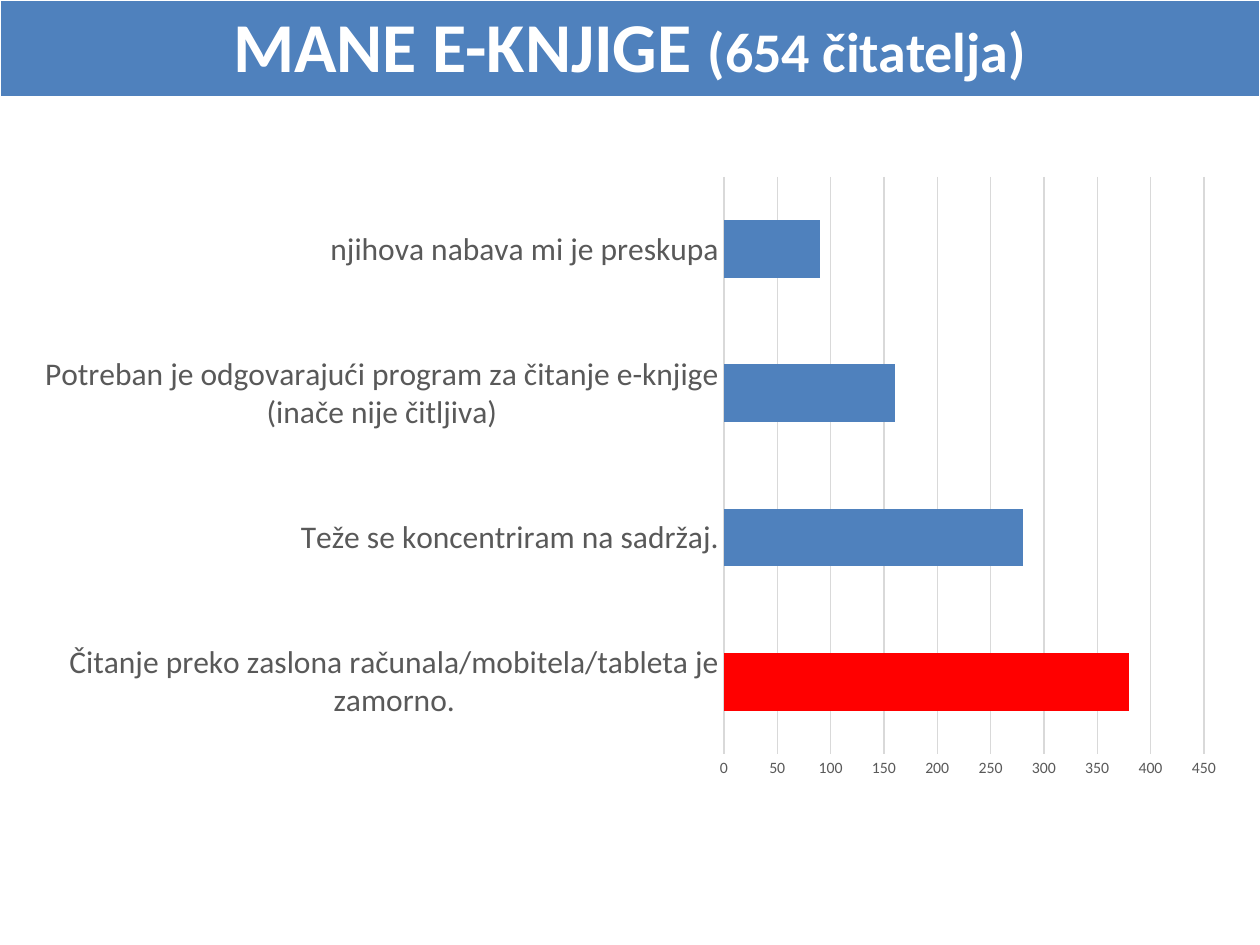
from lxml import etree
from pptx import Presentation
from pptx.chart.data import CategoryChartData
from pptx.dml.color import RGBColor
from pptx.enum.chart import XL_CHART_TYPE as ChartType, XL_TICK_MARK as TickMark
from pptx.enum.text import MSO_ANCHOR as Anchor, PP_ALIGN as Align
from pptx.oxml import parse_xml
from pptx.oxml.ns import nsdecls, qn
from pptx.util import Pt

SCALE = 914400 // 126
FONT = "Calibri"
BLUE, RED, WHITE, GRAY, GRID = "4F81BD", "FF0000", "FFFFFF", "595959", "D9D9D9"
TITLE = [("MANE E-KNJIGE ", 40), ("(654 čitatelja)", 32)]
BORDERS = {"lnL": 1, "lnR": 1, "lnT": 1, "lnB": 3}
BARS = [
    ("Čitanje preko zaslona računala/mobitela/tableta je zamorno.", 380, RED),
    ("Teže se koncentriram na sadržaj.", 280, BLUE),
    ("Potreban je odgovarajući program za čitanje e-knjige (inače nije čitljiva)", 160, BLUE),
    ("njihova nabava mi je preskupa", 90, BLUE),
]
SLIDE = (1260, 945)
TITLE_BOX = (0, 0, 1260, 97)
CHART_BOX = (20, 165, 1220, 625)
PLOT_BOX = (724, 177, 480, 577)


def px(*lengths):
    return [length * SCALE for length in lengths]


def color(value):
    return RGBColor.from_string(value)


def fill(target, value):
    target.fill.solid()
    target.fill.fore_color.rgb = color(value)


def style(font, size, value, bold=False):
    font.name, font.size, font.bold = FONT, Pt(size), bold
    font.color.rgb = color(value)


def add_text(paragraph, text, size, value=WHITE, bold=True):
    run = paragraph.add_run()
    run.text = text
    style(run.font, size, value, bold)


def add_title(slide):
    table = slide.shapes.add_table(1, 1, *px(*TITLE_BOX)).table
    cell = table.cell(0, 0)
    cell.vertical_anchor = Anchor.MIDDLE
    paragraph = cell.text_frame.paragraphs[0]
    paragraph.alignment = Align.CENTER
    for text, size in TITLE:
        add_text(paragraph, text, size)
    properties = cell._tc.get_or_add_tcPr()
    for side, width in BORDERS.items():
        properties.append(parse_xml(
            f'<a:{side} {nsdecls("a")} w="{Pt(width)}"><a:solidFill>'
            f'<a:srgbClr val="{WHITE}"/></a:solidFill></a:{side}>'))
    fill(cell, BLUE)


def place_plot(chart):
    plot_area = chart._chartSpace.chart.plotArea
    for old in plot_area.findall(qn("c:layout")):
        plot_area.remove(old)
    layout = etree.Element(qn("c:layout"))
    manual = etree.SubElement(layout, qn("c:manualLayout"))
    left, top, width, height = CHART_BOX
    x, y, w, h = PLOT_BOX
    settings = {
        "layoutTarget": "inner", "xMode": "edge", "yMode": "edge",
        "x": (x - left) / width, "y": (y - top) / height,
        "w": w / width, "h": h / height,
    }
    for name, value in settings.items():
        etree.SubElement(manual, qn(f"c:{name}")).set("val", str(value))
    plot_area.insert(0, layout)


def add_bars(slide):
    labels, values, colors = zip(*BARS)
    data = CategoryChartData()
    data.categories = labels
    data.add_series("Series 1", values)
    chart = slide.shapes.add_chart(ChartType.BAR_CLUSTERED, *px(*CHART_BOX), data).chart
    chart.has_legend = chart.has_title = False
    style(chart.font, 10, "000000")
    plot = chart.plots[0]
    plot.gap_width, plot.vary_by_categories = 150, False
    series = plot.series[0]
    fill(series.format, BLUE)
    for index, value in enumerate(colors):
        if value != BLUE:
            fill(series.points[index].format, value)
    for axis, size in ((chart.category_axis, 18), (chart.value_axis, 9)):
        axis.major_tick_mark = axis.minor_tick_mark = TickMark.NONE
        axis.format.line.fill.background()
        style(axis.tick_labels.font, size, GRAY)
    axis = chart.value_axis
    axis.minimum_scale, axis.maximum_scale, axis.major_unit = 0, 450, 50
    axis.has_major_gridlines = True
    line = axis.major_gridlines.format.line
    line.color.rgb, line.width = color(GRID), Pt(0.75)
    place_plot(chart)


def main():
    """Build the slide on the drawbacks of e-books."""
    presentation = Presentation()
    presentation.slide_width, presentation.slide_height = px(*SLIDE)
    slide = presentation.slides.add_slide(presentation.slide_layouts[6])
    add_title(slide)
    add_bars(slide)
    presentation.save("out.pptx")


if __name__ == "__main__":
    main()
